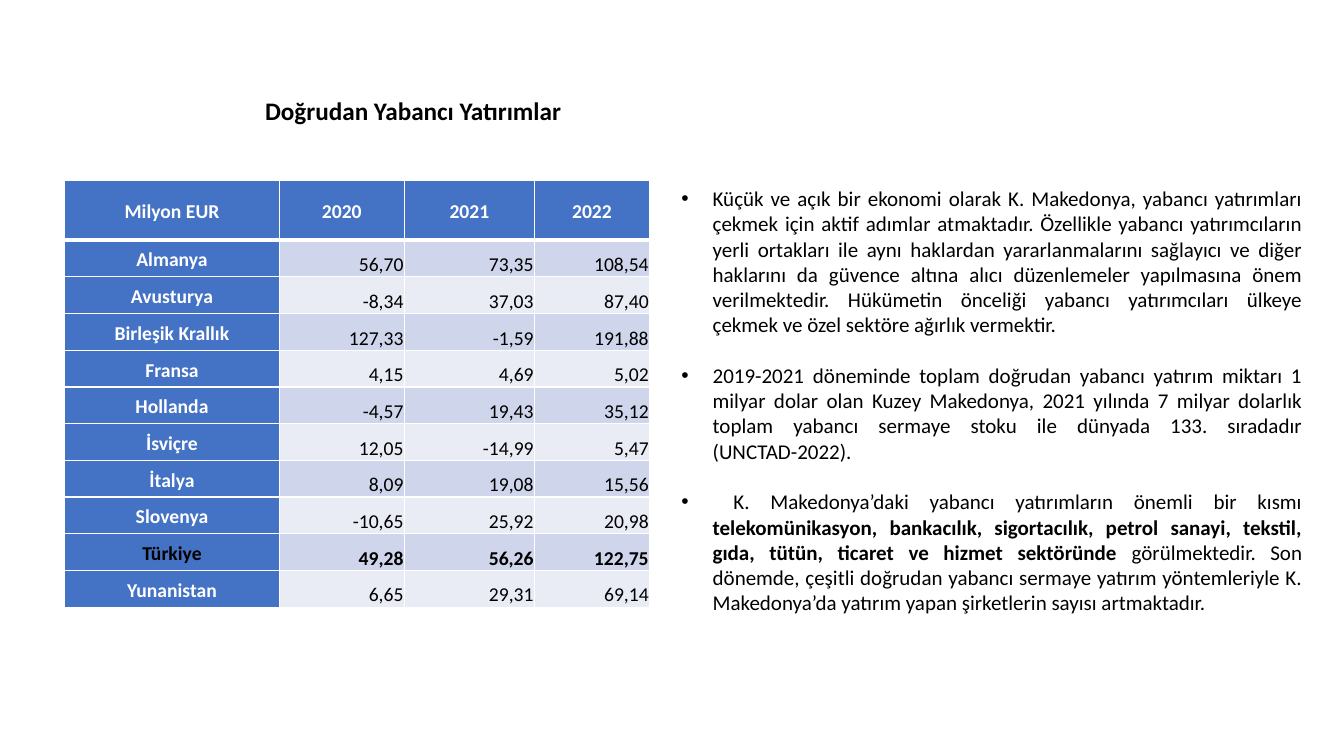
from lxml.etree import SubElement
from pptx import Presentation
from pptx.dml.color import RGBColor
from pptx.enum.text import MSO_ANCHOR as Anchor, MSO_AUTO_SIZE as AutoSize, PP_ALIGN as Align
from pptx.oxml import parse_xml
from pptx.oxml.ns import nsdecls, qn
from pptx.util import Cm, Pt

BLACK, WHITE, BLUE = "000000", "FFFFFF", "4472C4"
BANDS = ("CFD5EA", "E9EBF5")
HEADING = "Doğrudan Yabancı Yatırımlar"
YEARS = ("Milyon EUR", "2020", "2021", "2022")
INVESTMENTS = (
    ("Almanya", "56,70", "73,35", "108,54"),
    ("Avusturya", "-8,34", "37,03", "87,40"),
    ("Birleşik Krallık", "127,33", "-1,59", "191,88"),
    ("Fransa", "4,15", "4,69", "5,02"),
    ("Hollanda", "-4,57", "19,43", "35,12"),
    ("İsviçre", "12,05", "-14,99", "5,47"),
    ("İtalya", "8,09", "19,08", "15,56"),
    ("Slovenya", "-10,65", "25,92", "20,98"),
    ("Türkiye", "49,28", "56,26", "122,75"),
    ("Yunanistan", "6,65", "29,31", "69,14"),
)
HIGHLIGHT = "Türkiye"
COLUMN_WIDTHS = (5.41, 3.15, 3.28, 2.9)
HEADER_HEIGHT = 1.5
REMARKS = (
    (("Küçük ve açık bir ekonomi olarak K. Makedonya, yabancı yatırımları çekmek için "
      "aktif adımlar atmaktadır. Özellikle yabancı yatırımcıların yerli ortakları ile "
      "aynı haklardan yararlanmalarını sağlayıcı ve diğer haklarını da güvence altına "
      "alıcı düzenlemeler yapılmasına önem verilmektedir. Hükümetin önceliği yabancı "
      "yatırımcıları ülkeye çekmek ve özel sektöre ağırlık vermektir.", False),),
    (("2019-2021 döneminde toplam doğrudan yabancı yatırım miktarı 1 milyar dolar olan "
      "Kuzey Makedonya, 2021 yılında 7 milyar dolarlık toplam yabancı sermaye stoku ile "
      "dünyada 133. sıradadır (UNCTAD-2022).", False),),
    ((" K. Makedonya’daki yabancı yatırımların önemli bir kısmı ", False),
     ("telekomünikasyon, bankacılık, sigortacılık, petrol sanayi, tekstil, gıda, tütün, "
      "ticaret ve hizmet sektöründe", True),
     (" görülmektedir. Son dönemde, çeşitli doğrudan yabancı sermaye yatırım "
      "yöntemleriyle K. Makedonya’da yatırım yapan şirketlerin sayısı artmaktadır.", False)),
)
TEXT_FRAME = {"word_wrap": True, "auto_size": AutoSize.NONE, "vertical_anchor": Anchor.TOP,
              "margin_left": Cm(0.25), "margin_right": Cm(0.25),
              "margin_top": Cm(0.13), "margin_bottom": Cm(0.13)}
LABEL_CELL = {"vertical_anchor": Anchor.MIDDLE, "margin_left": Cm(0.18),
              "margin_right": Cm(0.18), "margin_top": 0, "margin_bottom": 0}
FIGURE_CELL = {"vertical_anchor": Anchor.BOTTOM, "margin_left": Cm(0.02),
               "margin_right": Cm(0.02), "margin_top": Cm(0.02), "margin_bottom": 0}


def apply(target, formats):
    """Set every attribute in the format dict on the target."""
    for attribute, value in formats.items():
        setattr(target, attribute, value)


def paint(fill, color):
    """Give a fill a solid colour from a hex string."""
    fill.solid()
    fill.fore_color.rgb = RGBColor.from_string(color)


def write(paragraph, words, size, color=BLACK, bold=False):
    """Append a formatted run to the paragraph."""
    run = paragraph.add_run()
    run.text = words
    apply(run.font, {"name": "Calibri", "size": Pt(size), "bold": bold})
    paint(run.font.fill, color)


def place(region, box):
    """Move a region to its box, given in centimetres."""
    apply(region, dict(zip(("left", "top", "width", "height"), map(Cm, box))))


def rule_cell(cell, top, bottom):
    """Draw white borders around a cell, with top and bottom widths in points."""
    properties = cell._tc.get_or_add_tcPr()
    for position, (side, width) in enumerate(zip("LRTB", (1, 1, top, bottom))):
        properties.insert(position, parse_xml(
            f'<a:ln{side} {nsdecls("a")} w="{Pt(width)}"><a:solidFill>'
            f'<a:srgbClr val="{WHITE}"/></a:solidFill></a:ln{side}>'))


def add_heading(heading, box):
    """Fill the title placeholder in the given box."""
    place(heading, box)
    apply(heading.text_frame, TEXT_FRAME)
    line = heading.text_frame.paragraphs[0]
    line.alignment = Align.LEFT
    write(line, HEADING, 18, bold=True)


def add_investments(slide, box):
    """Build the table of investments by country and year in the given box."""
    rows = (YEARS, *INVESTMENTS)
    table = slide.shapes.add_table(len(rows), len(YEARS), *map(Cm, box)).table
    apply(table, {"first_row": False, "horz_banding": False})
    for column, width in zip(table.columns, COLUMN_WIDTHS):
        column.width = Cm(width)
    country_height = (box[3] - HEADER_HEIGHT) / len(INVESTMENTS)
    for r, entries in enumerate(rows):
        table.rows[r].height = Cm(country_height if r else HEADER_HEIGHT)
        highlighted = entries[0] == HIGHLIGHT
        for c, entry in enumerate(entries):
            cell = table.cell(r, c)
            is_label = r == 0 or c == 0
            apply(cell, LABEL_CELL if is_label else FIGURE_CELL)
            paint(cell.fill, BLUE if is_label else BANDS[(r - 1) % 2])
            rule_cell(cell, top=3 if r == 1 else 1, bottom=1 if r else 3)
            line = cell.text_frame.paragraphs[0]
            apply(line, {"alignment": Align.CENTER if is_label else Align.RIGHT,
                         "line_spacing": 1.15 if is_label else 1.0})
            write(line, entry, 14, WHITE if is_label and not highlighted else BLACK,
                  is_label or highlighted)


def add_remarks(remarks, box):
    """Fill the body placeholder with justified bullets in the given box."""
    place(remarks, box)
    frame = remarks.text_frame
    apply(frame, TEXT_FRAME)
    for index, pieces in enumerate(REMARKS):
        remark = frame.add_paragraph() if index else frame.paragraphs[0]
        properties = remark._p.get_or_add_pPr()
        apply_indent = {"marL": Cm(0.79), "indent": Cm(-0.79)}
        for attribute, length in apply_indent.items():
            properties.set(attribute, str(length))
        SubElement(properties, qn("a:buChar"), char="•")
        apply(remark, {"alignment": Align.JUSTIFY, "line_spacing": 1.0,
                       "space_before": Pt(18.3 if index else 0), "space_after": Pt(0)})
        for words, bold in pieces:
            write(remark, words, 15, bold=bold)


def main():
    """Build the slide on foreign direct investment and save it."""
    deck = Presentation()
    apply(deck, {"slide_width": Cm(33.87), "slide_height": Cm(19.05)})
    slide = deck.slides.add_slide(deck.slide_layouts[1])
    add_heading(slide.shapes.title, (6.43, 2.26, 12.62, 1.02))
    add_investments(slide, (1.63, 4.55, sum(COLUMN_WIDTHS), 10.75))
    add_remarks(slide.placeholders[1], (16.92, 4.55, 16.15, 11.15))
    deck.save("out.pptx")


if __name__ == "__main__":
    main()
